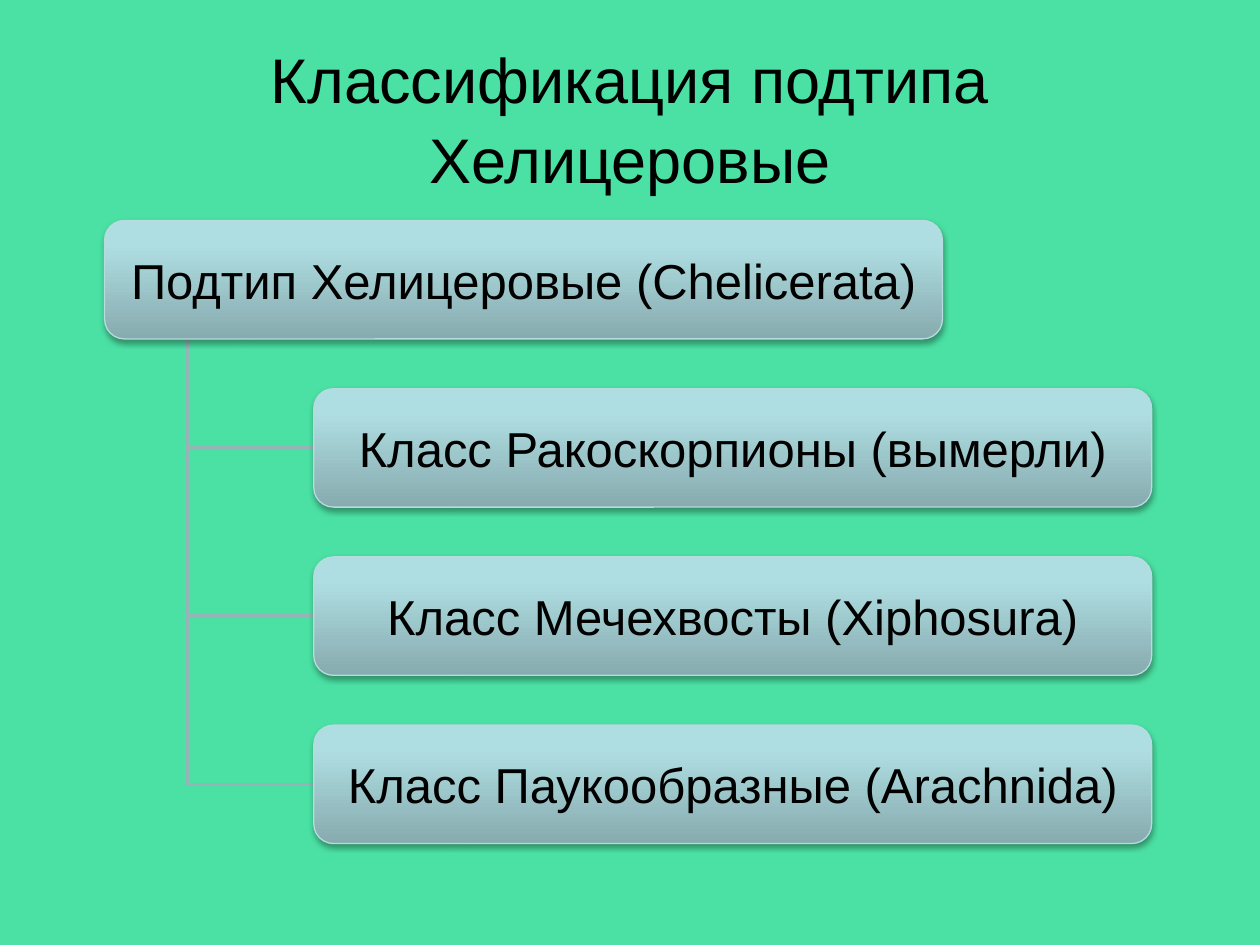
"""Build a slide showing the classification of the subphylum Chelicerata."""
import pptx
import pptx.dml.color
import pptx.enum.shapes
import pptx.enum.text
import pptx.oxml
import pptx.oxml.ns
import pptx.util

Inches = pptx.util.Inches
RGBColor = pptx.dml.color.RGBColor

BACKGROUND = RGBColor(0x4B, 0xE1, 0xA4)
BLACK = RGBColor(0x00, 0x00, 0x00)
BRANCH = RGBColor(0x96, 0xB3, 0xB6)
BORDER = RGBColor(0xB6, 0xDC, 0xDF)
GRADIENT_STOPS = (
    (0, RGBColor(0x87, 0xAB, 0xAE)),
    (80, RGBColor(0xAF, 0xDE, 0xE2)),
    (100, RGBColor(0xAF, 0xE0, 0xE4)),
)

FONT = "Arial"
TITLE = "Классификация подтипа Хелицеровые"
SUBPHYLUM = "Подтип Хелицеровые (Chelicerata)"
CLASSES = (
    "Класс Ракоскорпионы (вымерли)",
    "Класс Мечехвосты (Xiphosura)",
    "Класс Паукообразные (Arachnida)",
)

BOX_WIDTH, BOX_HEIGHT = 6.65, 0.94
SUBPHYLUM_LEFT, SUBPHYLUM_TOP = 0.83, 1.75
CLASS_LEFT = 2.49
TRUNK_LEFT = 1.49
ROW_PITCH = 1.335


def format_text(text_frame, size):
    """Centre the text and give its runs the slide font."""
    text_frame.word_wrap = True
    text_frame.vertical_anchor = pptx.enum.text.MSO_ANCHOR.MIDDLE
    for paragraph in text_frame.paragraphs:
        paragraph.alignment = pptx.enum.text.PP_ALIGN.CENTER
        for run in paragraph.runs:
            run.font.name = FONT
            run.font.size = pptx.util.Pt(size)
            run.font.color.rgb = BLACK


def add_title(slide):
    """Fill and place the title placeholder."""
    title = slide.shapes.title
    title.left, title.top = Inches(0.5), Inches(0.3)
    title.width, title.height = Inches(9), Inches(1.25)
    title.text_frame.text = TITLE
    title.text_frame.paragraphs[0].line_spacing = 1.05
    format_text(title.text_frame, 36)


def fill_with_gradient(shape):
    """Shade the shape from dark at the bottom to light at the top."""
    shape.fill.gradient()
    shape.fill.gradient_angle = 90
    stop_list = shape._element.spPr.find(".//" + pptx.oxml.ns.qn("a:gsLst"))
    for stop in list(stop_list):
        stop_list.remove(stop)
    for position, color in GRADIENT_STOPS:
        stop_list.append(pptx.oxml.parse_xml(
            f'<a:gs {pptx.oxml.ns.nsdecls("a")} pos="{position * 1000}">'
            f'<a:srgbClr val="{color}"/></a:gs>'))


def add_shadow(shape):
    """Give the shape a soft shadow below it."""
    shape.shadow.inherit = False
    effects = shape._element.spPr.find(pptx.oxml.ns.qn("a:effectLst"))
    effects.append(pptx.oxml.parse_xml(
        f'<a:outerShdw {pptx.oxml.ns.nsdecls("a")} blurRad="{pptx.util.Pt(3.1)}" '
        f'dist="{pptx.util.Pt(1.8)}" dir="5400000" rotWithShape="0">'
        '<a:srgbClr val="000000"><a:alpha val="35000"/></a:srgbClr></a:outerShdw>'))


def add_box(slide, text, left, top):
    """Add one rounded box with its label."""
    box = slide.shapes.add_shape(
        pptx.enum.shapes.MSO_SHAPE.ROUNDED_RECTANGLE,
        Inches(left), Inches(top), Inches(BOX_WIDTH), Inches(BOX_HEIGHT))
    fill_with_gradient(box)
    box.line.color.rgb = BORDER
    box.line.width = pptx.util.Pt(0.75)
    add_shadow(box)
    text_frame = box.text_frame
    text_frame.margin_left = text_frame.margin_right = Inches(0.07)
    text_frame.margin_top = text_frame.margin_bottom = Inches(0.07)
    text_frame.text = text
    format_text(text_frame, 28)


def add_branch(slide, class_top):
    """Add the elbow line from the subphylum box to a class box."""
    trunk = Inches(TRUNK_LEFT)
    middle = Inches(class_top + BOX_HEIGHT / 2)
    builder = slide.shapes.build_freeform(
        trunk, Inches(SUBPHYLUM_TOP + BOX_HEIGHT))
    builder.add_line_segments(
        [(trunk, middle), (Inches(CLASS_LEFT), middle)], close=False)
    branch = builder.convert_to_shape()
    branch.fill.background()
    branch.line.color.rgb = BRANCH
    branch.line.width = pptx.util.Pt(2)
    branch.shadow.inherit = False


def main():
    """Build and save the presentation."""
    presentation = pptx.Presentation()
    presentation.slide_width = Inches(10)
    presentation.slide_height = Inches(7.5)
    slide = presentation.slides.add_slide(presentation.slide_layouts[5])
    slide.background.fill.solid()
    slide.background.fill.fore_color.rgb = BACKGROUND
    add_title(slide)

    class_tops = [SUBPHYLUM_TOP + ROW_PITCH * row
                  for row in range(1, len(CLASSES) + 1)]
    for top in reversed(class_tops):
        add_branch(slide, top)
    add_box(slide, SUBPHYLUM, SUBPHYLUM_LEFT, SUBPHYLUM_TOP)
    for text, top in zip(CLASSES, class_tops):
        add_box(slide, text, CLASS_LEFT, top)
    presentation.save("out.pptx")


if __name__ == "__main__":
    main()
